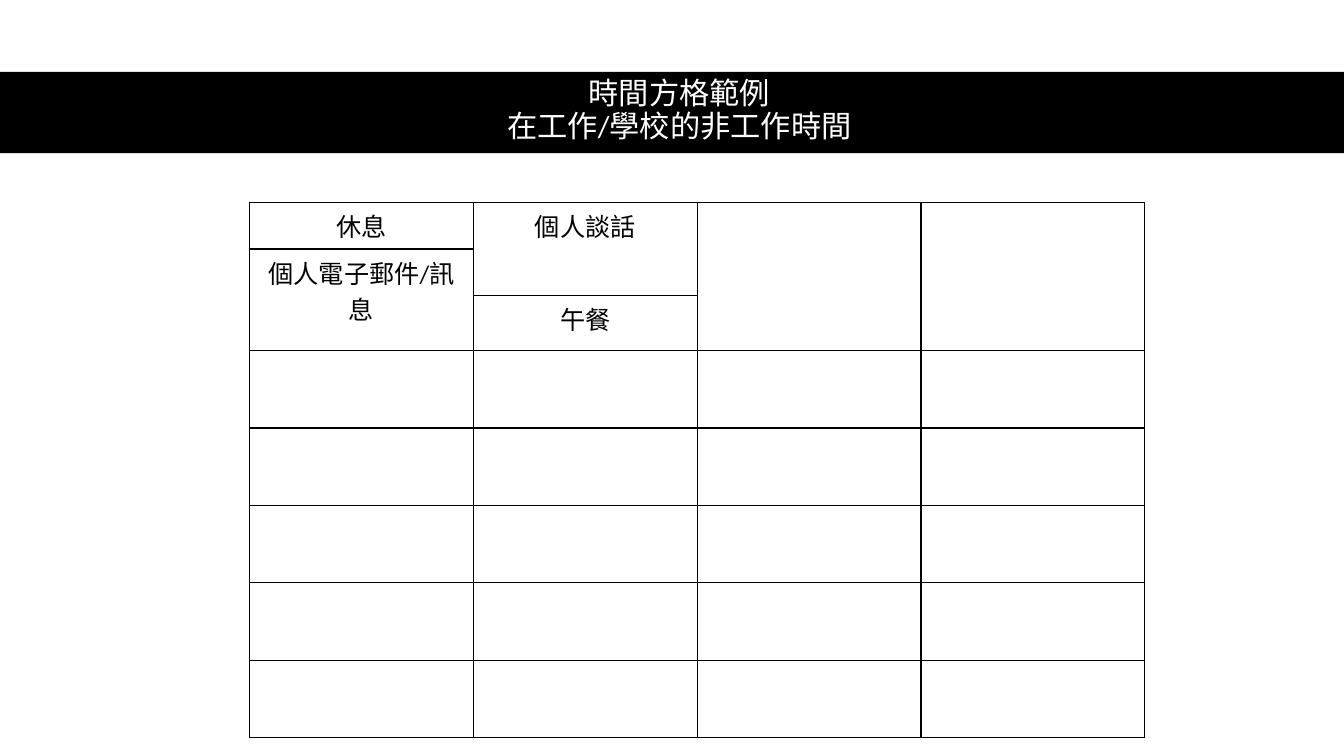
"""Build a slide with a sample time grid for non-work time at work or school."""
import lxml.etree
import pptx
import pptx.dml.color
import pptx.enum.lang
import pptx.enum.shapes
import pptx.enum.text
import pptx.oxml.ns
import pptx.util

Cm = pptx.util.Cm
Color = pptx.dml.color.RGBColor.from_string
theme = {"font": "Calibri", "ink": "000000", "paper": "FFFFFF",
         "title": 21.6, "cell": 18, "line": 1}


def write(frame, text, size, color, spacing=None):
    frame.text = text
    para = frame.paragraphs[0]
    para.alignment = pptx.enum.text.PP_ALIGN.CENTER
    if spacing:
        para.line_spacing = spacing
    for run in para.runs:
        run.font.name = theme["font"]
        run.font.size = pptx.util.Pt(size)
        run.font.color.rgb = Color(color)
        run.font.language_id = pptx.enum.lang.MSO_LANGUAGE_ID.TRADITIONAL_CHINESE


def border(cell):
    props = cell._tc.get_or_add_tcPr()
    tag = pptx.oxml.ns.qn
    for spot, side in enumerate(("a:lnL", "a:lnR", "a:lnT", "a:lnB")):
        line = lxml.etree.Element(tag(side), w=str(pptx.util.Pt(theme["line"])))
        fill = lxml.etree.SubElement(line, tag("a:solidFill"))
        lxml.etree.SubElement(fill, tag("a:srgbClr"), val=theme["ink"])
        props.insert(spot, line)


deck = pptx.Presentation()
deck.slide_width, deck.slide_height = Cm(33.87), Cm(19.05)
slide = deck.slides.add_slide(deck.slide_layouts[5])
shapes = slide.shapes

band = shapes.add_shape(pptx.enum.shapes.MSO_SHAPE.RECTANGLE,
                        0, Cm(1.81), deck.slide_width, Cm(2.05))
band.shadow.inherit = False
band.fill.solid()
band.fill.fore_color.rgb = Color(theme["ink"])
band.line.fill.background()

title = shapes.title
title.left, title.top, title.width, title.height = Cm(1.55), Cm(1.78), Cm(31.14), Cm(2.06)
title.text_frame.vertical_anchor = pptx.enum.text.MSO_ANCHOR.MIDDLE
title.text_frame.auto_size = pptx.enum.text.MSO_AUTO_SIZE.NONE
write(title.text_frame, "時間方格範例\v在工作/學校的非工作時間",
      size=theme["title"], color=theme["paper"], spacing=0.9)
shapes._spTree.append(title._element)

rows = [0.97, 0.38, 1.39] + [1.95] * 5
cols = [5.64] * 4
grid = shapes.add_table(len(rows), len(cols), Cm(6.29), Cm(5.1),
                        Cm(sum(cols)), Cm(sum(rows))).table
grid.first_row = grid.horz_banding = False
for row, high in zip(grid.rows, rows):
    row.height = Cm(high)
for col, wide in zip(grid.columns, cols):
    col.width = Cm(wide)

for cell in grid.iter_cells():
    cell.fill.background()
    border(cell)

for top, end, col in [(0, 1, 1), (0, 2, 2), (0, 2, 3), (1, 2, 0)]:
    grid.cell(top, col).merge(grid.cell(end, col))

tasks = {(0, 0): "休息", (0, 1): "個人談話", (1, 0): "個人電子郵件/訊息", (2, 1): "午餐"}
for (row, col), text in tasks.items():
    write(grid.cell(row, col).text_frame, text, size=theme["cell"], color=theme["ink"])

deck.save("out.pptx")
